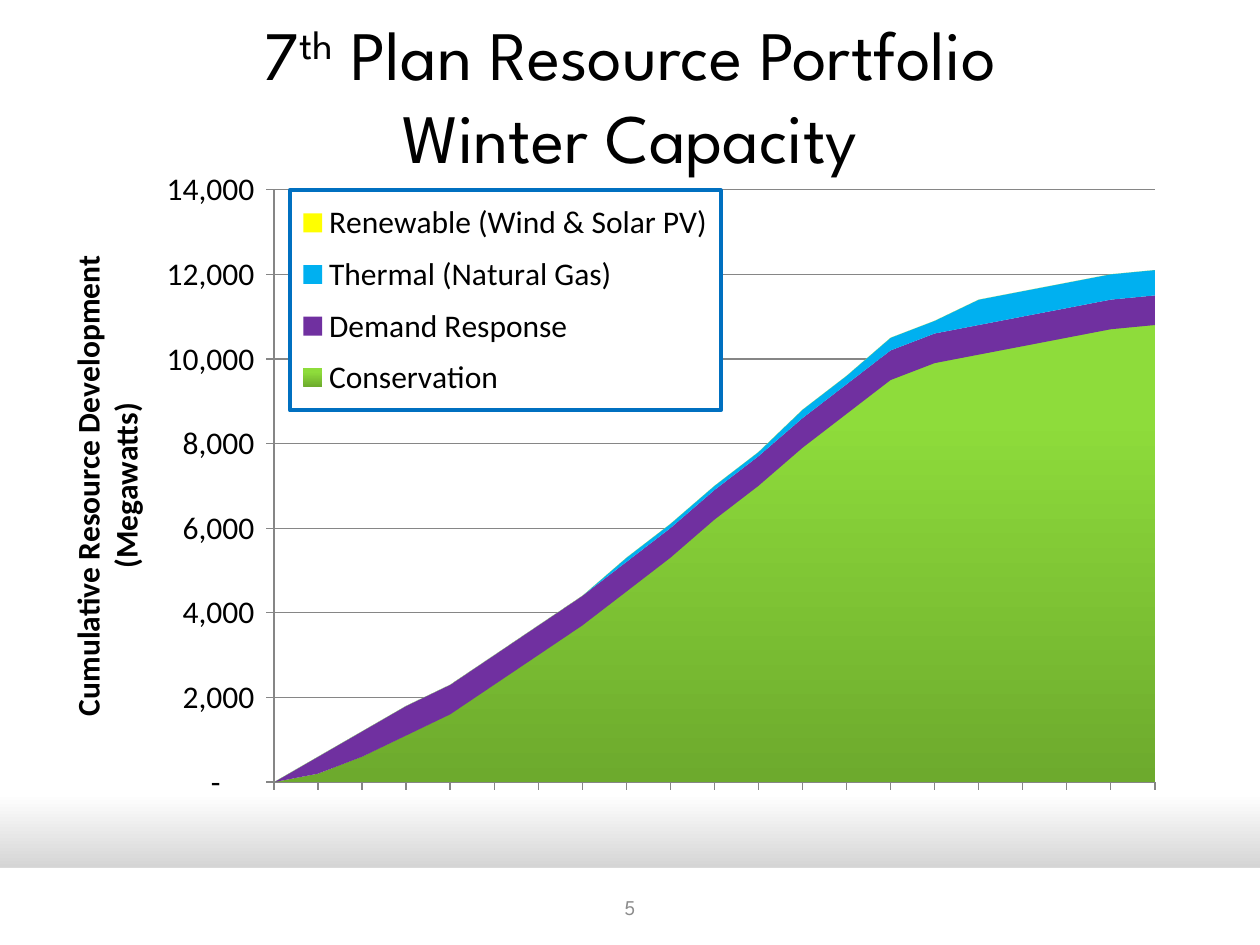
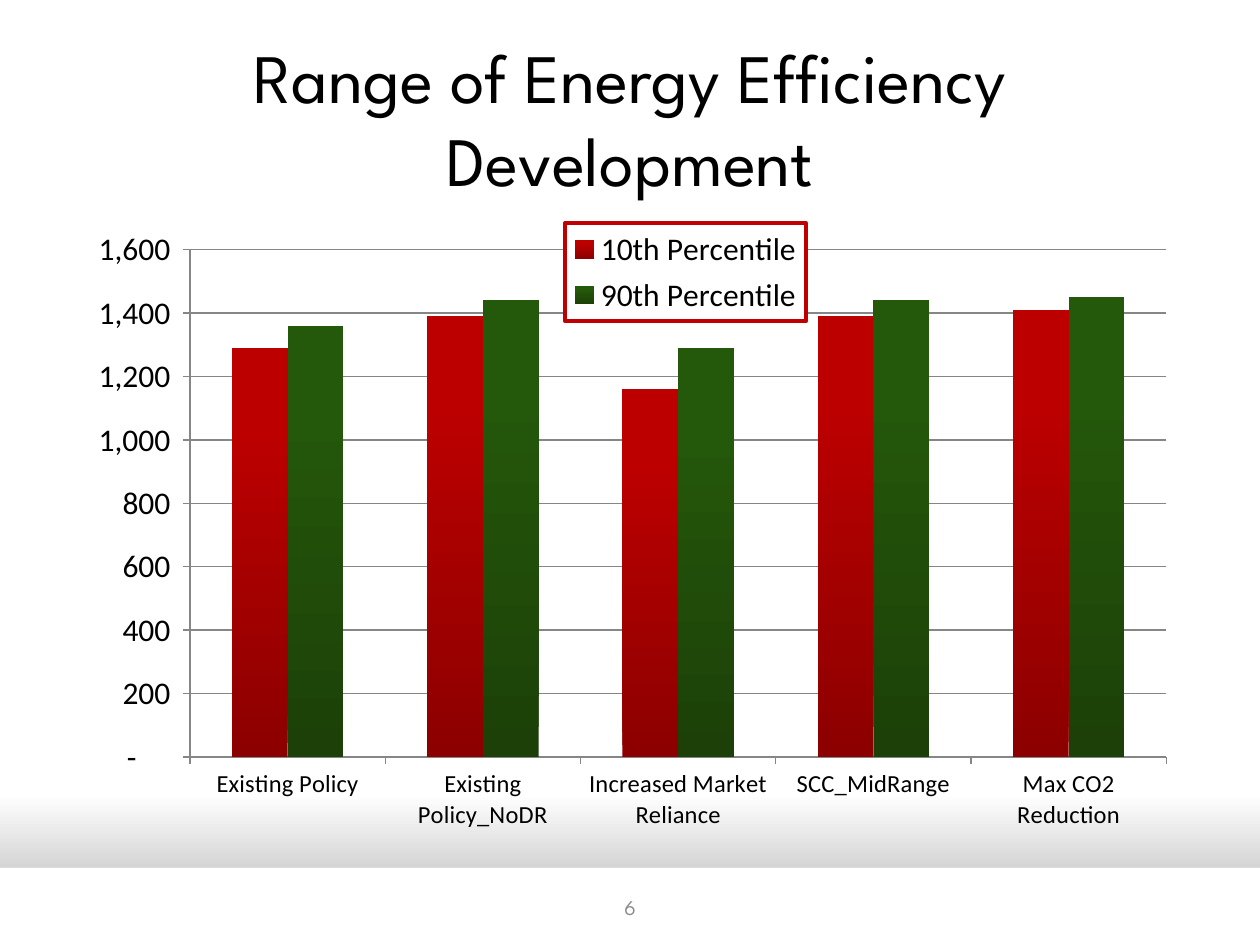
"""Build two slides on resource growth, each with a title and a chart."""
import pptx
import pptx.util
import pptx.dml.color
import pptx.chart.data
import pptx.enum.chart
import pptx.enum.text
import pptx.oxml
import pptx.oxml.ns

PX = 914400 / 126
HEAD, BODY = "League Spartan", "Calibri"
BLACK, WHITE, GREY, AXIS = "000000", "FFFFFF", "8C8C8C", "868686"
FORMAT = '_(* #,##0_);_(* \\(#,##0\\);_(* "-"??_);_('
NS = pptx.oxml.ns.nsdecls("a", "c")
KIND = pptx.enum.chart.XL_CHART_TYPE
TICK = pptx.enum.chart.XL_TICK_MARK

YEARS = [str(year) for year in range(2015, 2036)]
PLAN = [
    ("Conservation", [None, 200, 600, 1100, 1600, 2300, 3000, 3700, 4500, 5300, 6200,
                      7000, 7900, 8700, 9500, 9900, 10100, 10300, 10500, 10700, 10800]),
    ("Demand Response", [None, 400, 600] + [700] * 18),
    ("Thermal (Natural Gas)", [None] + [0] * 7 + [100] * 4 + [200] * 2 + [300] * 2 + [600] * 5),
    ("Renewable (Wind & Solar PV)", [None] + [0] * 20),
]
PATHS = ["Existing Policy", "Existing Policy_NoDR", "Increased Market Reliance",
         "SCC_MidRange", "Max CO2 Reduction"]
RANGE = [("10th Percentile", [1290, 1390, 1160, 1390, 1410]),
         ("90th Percentile", [1360, 1440, 1290, 1440, 1450])]


def px(*sizes):
    return [pptx.util.Emu(round(size * PX)) for size in sizes]


def tint(code):
    return pptx.dml.color.RGBColor.from_string(code)


def paint(fill, color):
    if isinstance(color, str):
        fill.solid()
        fill.fore_color.rgb = tint(color)
        return
    angle, stops = color
    fill.gradient()
    fill.gradient_angle = angle
    for stop, (place, code) in zip(fill.gradient_stops, stops):
        stop.position = place
        stop.color.rgb = tint(code)


def style(font, size, name=BODY, color=BLACK, bold=False):
    font.size, font.name, font.bold = pptx.util.Pt(size), name, bold
    font.color.rgb = tint(color)


def write(slide, box, size, runs, color=BLACK):
    frame = slide.shapes.add_textbox(*px(*box)).text_frame
    frame.word_wrap = True
    frame.vertical_anchor = pptx.enum.text.MSO_ANCHOR.MIDDLE
    para = frame.paragraphs[0]
    para.alignment = pptx.enum.text.PP_ALIGN.CENTER
    for text, lift in runs:
        if text == "\n":
            para.add_line_break()
            continue
        run = para.add_run()
        run.text = text
        style(run.font, size, HEAD, color)
        if lift:
            run.font._element.set("baseline", str(lift * 1000))


def begin(deck, number, box, title):
    slide = deck.slides.add_slide(deck.slide_layouts[6])
    paint(slide.background.fill, (270, [(0.84, WHITE), (1, "A6A6A6")]))
    band = slide.shapes.add_shape(pptx.enum.shapes.MSO_SHAPE.RECTANGLE, *px(0, 868, 1260, 77))
    band.shadow.inherit = False
    paint(band.fill, WHITE)
    band.line.fill.background()
    write(slide, box, 39.6, title)
    write(slide, (483, 882, 294, 50), 12, [(str(number), 0)], GREY)
    return slide


def layout(box, inner=False):
    target = '<c:layoutTarget val="inner"/>' if inner else ""
    modes = "".join(f'<c:{key}Mode val="edge"/>' for key in "xy")
    spots = "".join(f'<c:{key} val="{val}"/>' for key, val in zip("xywh", box))
    return pptx.oxml.parse_xml(
        f"<c:layout {NS}><c:manualLayout>{target}{modes}{spots}</c:manualLayout></c:layout>")


def place(chart, box):
    area = chart._chartSpace.chart.plotArea
    for old in area.findall(pptx.oxml.ns.qn("c:layout")):
        area.remove(old)
    area.insert(0, layout(box, True))


def key(chart, box, color):
    chart.has_legend = True
    legend = chart.legend
    legend.position = pptx.enum.chart.XL_LEGEND_POSITION.RIGHT
    legend.include_in_layout = False
    style(legend.font, 18)
    node = legend._element
    for old in node.findall(pptx.oxml.ns.qn("c:layout")):
        node.remove(old)
    node.insert(1, layout(box))
    node.find(pptx.oxml.ns.qn("c:txPr")).addprevious(pptx.oxml.parse_xml(
        f'<c:spPr {NS}><a:solidFill><a:srgbClr val="{WHITE}"/></a:solidFill>'
        f'<a:ln w="28575"><a:solidFill><a:srgbClr val="{color}"/></a:solidFill></a:ln></c:spPr>'))


def scale(chart, top, step):
    axis = chart.value_axis
    axis.minimum_scale, axis.maximum_scale, axis.major_unit = 0, top, step
    axis.has_major_gridlines = True
    axis.major_gridlines.format.line.color.rgb = tint(AXIS)
    axis.tick_labels.number_format = FORMAT
    axis.tick_labels.number_format_is_linked = False
    for side in (axis, chart.category_axis):
        side.major_tick_mark, side.minor_tick_mark = TICK.OUTSIDE, TICK.NONE
        side.format.line.color.rgb = tint(AXIS)
        style(side.tick_labels.font, 18)


def graph(slide, kind, box, names, rows, colors):
    data = pptx.chart.data.CategoryChartData(number_format="#,##0")
    data.categories = names
    for name, vals in rows:
        data.add_series(name, vals)
    chart = slide.shapes.add_chart(kind, *px(*box), data).chart
    chart.has_title = False
    style(chart.font, 18)
    chart.plots[0].vary_by_categories = False
    for line, color in zip(chart.plots[0].series, colors):
        paint(line.format.fill, color)
    return chart


def label(axis, lines):
    axis.has_title = True
    frame = axis.axis_title.text_frame
    frame._txBody.bodyPr.set("rot", "-5400000")
    frame._txBody.bodyPr.set("vert", "horz")
    for spot, text in enumerate(lines):
        para = frame.add_paragraph() if spot else frame.paragraphs[0]
        run = para.add_run()
        run.text = text
        style(run.font, 18, bold=True)


def plan(deck):
    title = [("7", 0), ("th", 30), (" Plan Resource Portfolio", 0), ("\n", 0),
             ("Winter Capacity", 0)]
    slide = begin(deck, 5, (63, 21, 1134, 147), title)
    green = (90, [(0, "6DAA2D"), (0.8, "8EDC3B")])
    chart = graph(slide, KIND.AREA_STACKED, (63, 158, 1134, 703), YEARS, PLAN,
                  [green, "7030A0", "00B0F0", "FFFF00"])
    scale(chart, 14000, 2000)
    chart.category_axis.tick_label_position = pptx.enum.chart.XL_TICK_LABEL_POSITION.NONE
    chart.value_axis._element.find(pptx.oxml.ns.qn("c:crossBetween")).set("val", "midCat")
    label(chart.value_axis, ["Cumulative Resource Development", "(Megawatts)"])
    place(chart, (0.186, 0.045, 0.777, 0.843))
    key(chart, (0.2, 0.046, 0.38, 0.313), "0070C0")


def spread(deck):
    slide = begin(deck, 6, (63, 38, 1134, 158), [("Range of Energy Efficiency Development", 0)])
    shades = [(90, [(0, "8C0000"), (0.8, "BC0000")]), (90, [(0, "1C4008"), (0.8, "24580B")])]
    chart = graph(slide, KIND.COLUMN_CLUSTERED, (63, 221, 1134, 624), PATHS, RANGE, shades)
    scale(chart, 1600, 200)
    style(chart.category_axis.tick_labels.font, 14)
    chart.plots[0].gap_width, chart.plots[0].overlap = 150, 0
    place(chart, (0.112, 0.045, 0.861, 0.814))
    key(chart, (0.443, 0.002, 0.212, 0.158), "C00000")


def main():
    deck = pptx.Presentation()
    deck.slide_width, deck.slide_height = px(1260, 945)
    plan(deck)
    spread(deck)
    deck.save("out.pptx")


if __name__ == "__main__":
    main()
